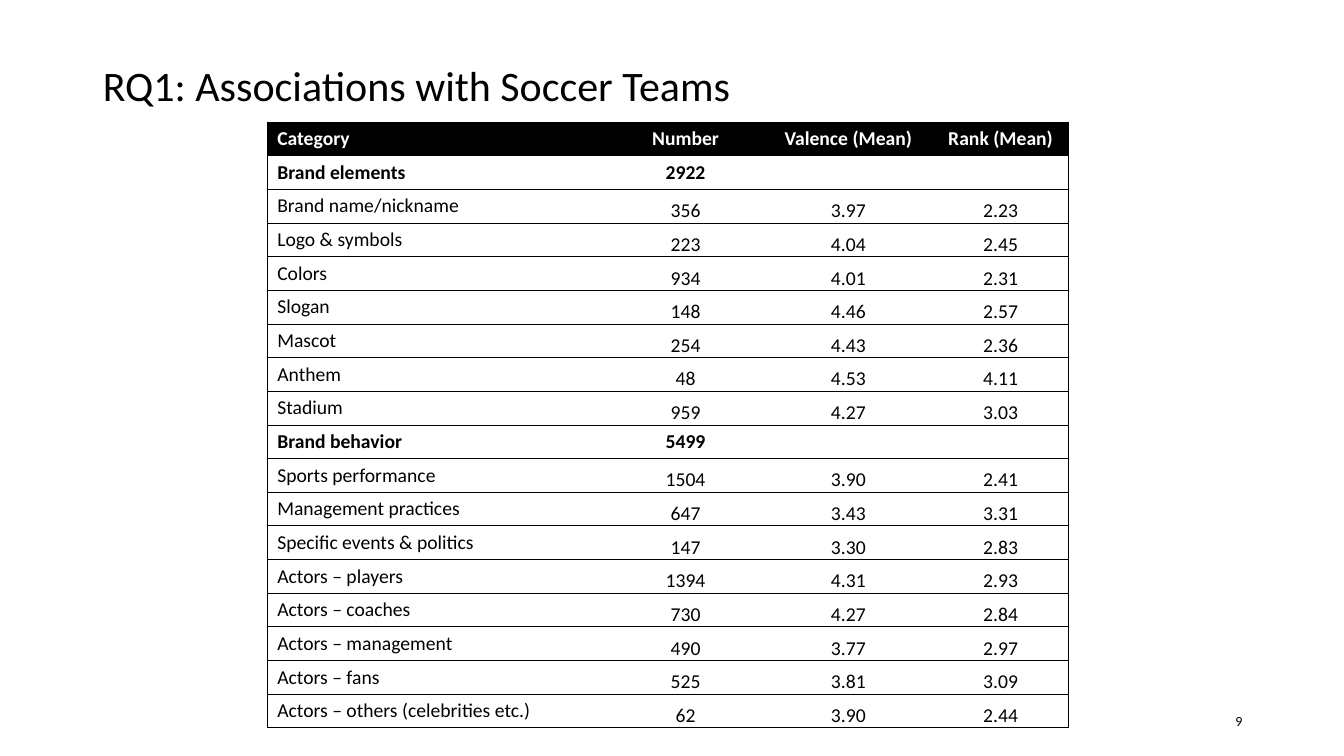
from lxml.etree import SubElement
from pptx import Presentation
from pptx.dml.color import RGBColor
from pptx.enum.text import MSO_ANCHOR, PP_ALIGN
from pptx.oxml.ns import qn
from pptx.util import Inches, Pt

COLORS = {"black": "000000", "white": "FFFFFF"}
FONT = "Calibri"
TABLE_SIZE = 14
PLAIN_STYLE = "{2D5ABB26-0587-4C30-8999-92F81FD0307C}"  # no style, no grid
COLUMN_WIDTHS = [3.37, 1.56, 1.67, 1.35]
ROW_HEIGHT = 0.31
HEADER = ["Category", "Number", "Valence (Mean)", "Rank (Mean)"]
GROUPS = [
    (["Brand elements", "2922", "", ""], [
        ["Brand name/nickname", "356", "3.97", "2.23"],
        ["Logo & symbols", "223", "4.04", "2.45"],
        ["Colors", "934", "4.01", "2.31"],
        ["Slogan", "148", "4.46", "2.57"],
        ["Mascot", "254", "4.43", "2.36"],
        ["Anthem", "48", "4.53", "4.11"],
        ["Stadium", "959", "4.27", "3.03"],
    ]),
    (["Brand behavior", "5499", "", ""], [
        ["Sports performance", "1504", "3.90", "2.41"],
        ["Management practices", "647", "3.43", "3.31"],
        ["Specific events & politics", "147", "3.30", "2.83"],
        ["Actors – players", "1394", "4.31", "2.93"],
        ["Actors – coaches", "730", "4.27", "2.84"],
        ["Actors – management", "490", "3.77", "2.97"],
        ["Actors – fans", "525", "3.81", "3.09"],
        ["Actors – others (celebrities etc.)", "62", "3.90", "2.44"],
    ]),
]


def write(tf, text, size=TABLE_SIZE, color="black", bold=False,
          align=PP_ALIGN.LEFT, spacing=None):
    p = tf.paragraphs[0]
    p.alignment = align
    if spacing:
        p.line_spacing = spacing
    if not text:
        # Keep an empty cell as low as its row
        SubElement(p._p, qn("a:endParaRPr"), sz=str(size * 100))
        return
    r = p.add_run()
    r.text = text
    r.font.name = FONT
    r.font.size = Pt(size)
    r.font.bold = bold
    r.font.color.rgb = RGBColor.from_string(COLORS[color])


def set_borders(cell, sides):
    tc_pr = cell._tc.get_or_add_tcPr()
    for side in "LRTB":
        if side in sides:
            ln = SubElement(tc_pr, qn(f"a:ln{side}"), w=str(Pt(0.5)))
            fill = SubElement(ln, qn("a:solidFill"))
            SubElement(fill, qn("a:srgbClr"), val=COLORS["black"])


def add_title(s, text):
    title = s.shapes.title
    title.left, title.top = Inches(0.92), Inches(0.62)
    title.width, title.height = Inches(11.5), Inches(0.53)
    title.text_frame.vertical_anchor = MSO_ANCHOR.BOTTOM
    write(title.text_frame, text, size=30, spacing=0.9)


def add_page_number(s, number):
    sp = s.shapes.add_textbox(Inches(9.42), Inches(6.95), Inches(3), Inches(0.4))
    tf = sp.text_frame
    tf.word_wrap = True
    tf.vertical_anchor = MSO_ANCHOR.MIDDLE
    write(tf, number, size=10, align=PP_ALIGN.RIGHT)


def fill_row(table, row, values, kind):
    last = len(values) - 1
    for col, value in enumerate(values):
        cell = table.cell(row, col)
        set_borders(cell, "TB" + "L" * (col == 0) + "R" * (col == last))
        cell.fill.solid()
        cell.fill.fore_color.rgb = RGBColor.from_string(
            COLORS["black" if kind == "header" else "white"])
        if kind == "item" and col > 0:
            cell.vertical_anchor = MSO_ANCHOR.BOTTOM
            cell.margin_left = cell.margin_right = cell.margin_top = Inches(0.01)
            cell.margin_bottom = 0
        write(cell.text_frame, value, bold=kind != "item",
              color="white" if kind == "header" else "black",
              align=PP_ALIGN.CENTER if col else PP_ALIGN.LEFT)


def add_association_table(s):
    rows = [(HEADER, "header")]
    for total, items in GROUPS:
        rows.append((total, "total"))
        rows += [(item, "item") for item in items]
    table = s.shapes.add_table(
        len(rows), len(HEADER), Inches(2.65), Inches(1.21),
        Inches(sum(COLUMN_WIDTHS)), Inches(ROW_HEIGHT * len(rows))).table
    table.horz_banding = False
    table._tbl.tblPr.find(qn("a:tableStyleId")).text = PLAIN_STYLE
    for column, width in zip(table.columns, COLUMN_WIDTHS):
        column.width = Inches(width)
    for row, (values, kind) in enumerate(rows):
        fill_row(table, row, values, kind)


def main():
    prs = Presentation()
    prs.slide_width, prs.slide_height = Inches(13.33), Inches(7.5)
    s = prs.slides.add_slide(prs.slide_layouts[5])
    # Heading and page number
    add_title(s, "RQ1: Associations with Soccer Teams")
    add_page_number(s, "9")
    # Categories with their counts and means
    add_association_table(s)
    prs.save("out.pptx")


if __name__ == "__main__":
    main()
